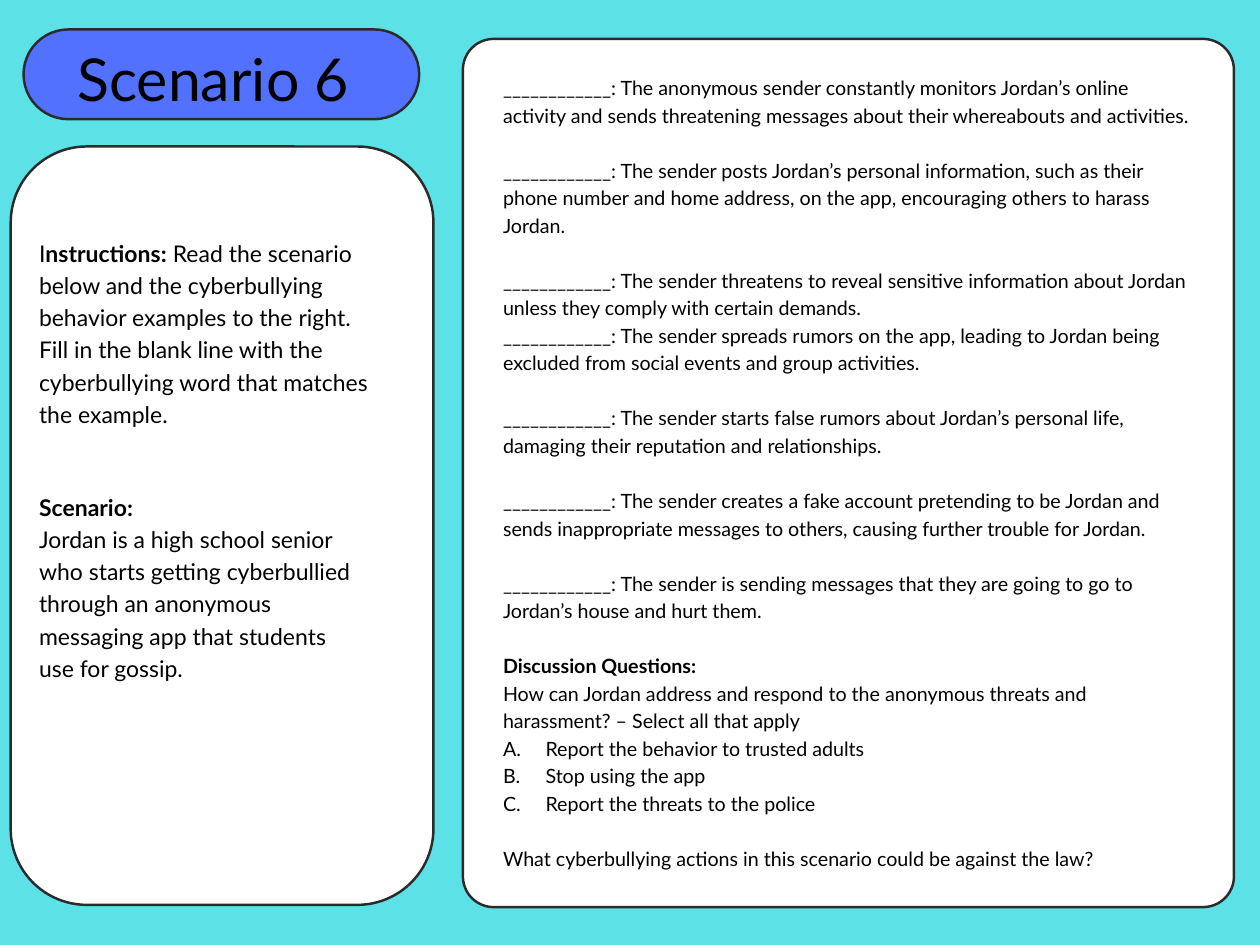
from lxml import etree
from pptx import Presentation
from pptx.dml.color import RGBColor
from pptx.enum.shapes import MSO_SHAPE
from pptx.enum.text import MSO_ANCHOR, MSO_AUTO_SIZE, PP_ALIGN
from pptx.oxml.ns import qn
from pptx.util import Inches, Pt

ROUNDED = MSO_SHAPE.ROUNDED_RECTANGLE
TOP = MSO_ANCHOR.TOP
FIXED = MSO_AUTO_SIZE.NONE
LEFT, CENTER = PP_ALIGN.LEFT, PP_ALIGN.CENTER

FONT = "Lato"
AQUA, BLUE, WHITE, INK, BLACK = "5CE1E6", "5271FF", "FFFFFF", "2B2B2B", "000000"
LEADING = 1.4
ANSWER_INDENT = Inches(0.36)
BLANK = "____________: "

INSTRUCTIONS = [
    ("I", False),
    ("nstructions:", True),
    (" Read the scenario below and the cyberbullying behavior examples to the right. "
     "Fill in the blank line with the cyberbullying word that matches the example.", False),
]
SCENARIO = ("Jordan is a high school senior who starts getting cyberbullied through "
            "an anonymous messaging app that students use for gossip.")
# Each example, and whether a blank line's height precedes it
EXAMPLES = [
    ("The anonymous sender constantly monitors Jordan’s online activity and sends "
     "threatening messages about their whereabouts and activities.", False),
    ("The sender posts Jordan’s personal information, such as their phone number and "
     "home address, on the app, encouraging others to harass Jordan.", True),
    ("The sender threatens to reveal sensitive information about Jordan unless they "
     "comply with certain demands.", True),
    ("The sender spreads rumors on the app, leading to Jordan being excluded from "
     "social events and group activities.", False),
    ("The sender starts false rumors about Jordan’s personal life, damaging their "
     "reputation and relationships.", True),
    ("The sender creates a fake account pretending to be Jordan and sends "
     "inappropriate messages to others, causing further trouble for Jordan.", True),
    ("The sender is sending messages that they are going to go to Jordan’s house and "
     "hurt them.", True),
]
QUESTION = ("How can Jordan address and respond to the anonymous threats and "
            "harassment? – Select all that apply")
ANSWERS = ["Report the behavior to trusted adults", "Stop using the app",
           "Report the threats to the police"]
LAW_QUESTION = "What cyberbullying actions in this scenario could be against the law?"


def color(value):
    return RGBColor.from_string(value)


def within(box, left, top, width, height):
    """Return the part of box given by percentages of its size."""
    x, y, w, h = box
    return (int(x + w * left / 100), int(y + h * top / 100),
            int(w * width / 100), int(h * height / 100))


def add_card(slide, box, fill, corner):
    card = slide.shapes.add_shape(ROUNDED, *box)
    card.adjustments[0] = corner
    card.shadow.inherit = False
    card.fill.solid()
    card.fill.fore_color.rgb = color(fill)
    card.line.color.rgb = color(INK)
    card.line.width = Pt(1.5)


def place_text(holder, box):
    """Fit a text holder to box, in front of the cards, without margins."""
    holder.left, holder.top, holder.width, holder.height = box
    holder._element.getparent().append(holder._element)
    frame_format = {"margin_left": 0, "margin_top": 0, "margin_right": 0,
                    "margin_bottom": 0, "word_wrap": True, "auto_size": FIXED,
                    "vertical_anchor": TOP}
    for name, value in frame_format.items():
        setattr(holder.text_frame, name, value)
    return holder.text_frame


def write(paragraph, runs, size, gap=False, align=LEFT, lettered=False):
    """Fill a paragraph with (text, bold) runs; gap leaves one line free above."""
    leading = Pt(size * LEADING)
    paragraph.alignment = align
    paragraph.line_spacing = leading
    paragraph.space_before = leading if gap else Pt(0)
    paragraph.space_after = Pt(0)
    properties = paragraph._p.get_or_add_pPr()
    indent = ANSWER_INDENT if lettered else 0
    properties.set("marL", str(indent))
    properties.set("indent", str(-indent))
    if lettered:
        etree.SubElement(properties, qn("a:buAutoNum"), type="alphaUcPeriod")
    else:
        etree.SubElement(properties, qn("a:buNone"))
    for text, bold in runs:
        run = paragraph.add_run()
        run.text = text
        run.font.name = FONT
        run.font.size = Pt(size)
        run.font.bold = bold
        run.font.color.rgb = color(BLACK)


def write_all(frame, rows, size):
    """Write rows of (runs, format) as the paragraphs of a frame."""
    for number, (runs, options) in enumerate(rows):
        paragraph = frame.add_paragraph() if number else frame.paragraphs[0]
        write(paragraph, runs, size, **options)


def add_heading(slide, box):
    add_card(slide, box, BLUE, 0.5)
    frame = place_text(slide.shapes.title, within(box, -25.07, 1.3, 145.97, 88.2))
    write_all(frame, [([("Scenario 6", False)], {"align": CENTER})], 36)


def add_briefing(slide, box):
    add_card(slide, box, WHITE, 0.18)
    passages = [
        ((6.7, 11.68, 80.17, 25.2), [(INSTRUCTIONS, {})]),
        ((6.7, 45.17, 77.65, 29.4), [([("Scenario:", True)], {}),
                                     ([(SCENARIO, False)], {})]),
    ]
    for shares, rows in passages:
        area = within(box, *shares)
        write_all(place_text(slide.shapes.add_textbox(*area), area), rows, 14)


def add_worksheet(slide, box):
    add_card(slide, box, WHITE, 0.04)
    frame = place_text(slide.placeholders[1], within(box, 5.2, 3.81, 89.43, 93.3))
    rows = [([(BLANK + example, False)], {"gap": gap}) for example, gap in EXAMPLES]
    rows += [([("Discussion Questions:", True)], {"gap": True}),
             ([(QUESTION, False)], {})]
    rows += [([(answer, False)], {"lettered": True}) for answer in ANSWERS]
    rows.append(([(LAW_QUESTION, False)], {"gap": True}))
    write_all(frame, rows, 12)


def main():
    deck = Presentation()
    deck.slide_width, deck.slide_height = Inches(10.67), Inches(8)
    slide = deck.slides.add_slide(deck.slide_layouts[1])
    slide.background.fill.solid()
    slide.background.fill.fore_color.rgb = color(AQUA)

    page = (0, 0, deck.slide_width, deck.slide_height)
    add_briefing(slide, within(page, 0.85, 15.5, 33.55, 80.25))
    add_worksheet(slide, within(page, 36.74, 4.12, 61.2, 91.88))
    add_heading(slide, within(page, 1.87, 3.12, 31.4, 9.5))
    deck.save("out.pptx")


if __name__ == "__main__":
    main()
